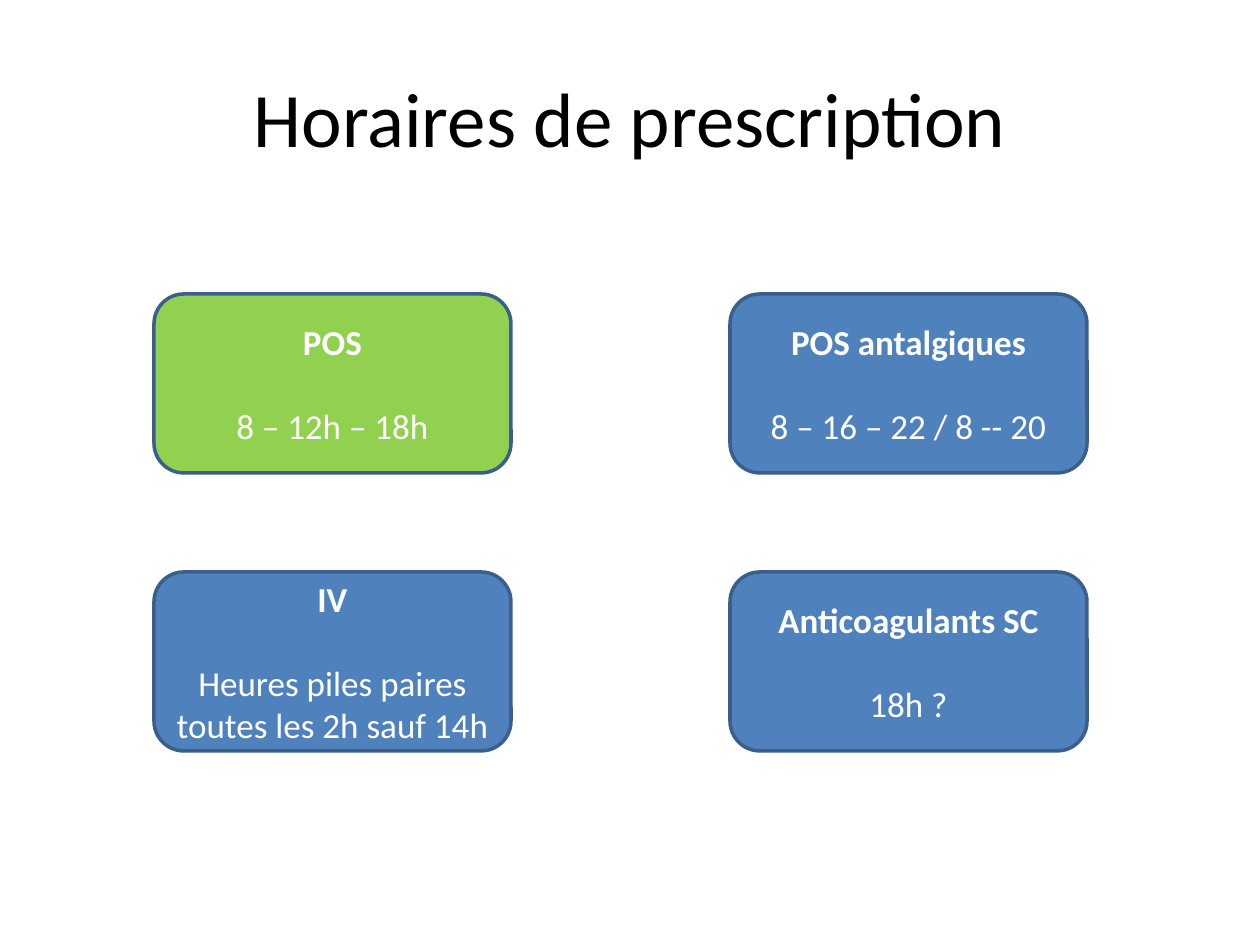
from dataclasses import dataclass

from pptx import Presentation
from pptx.dml.color import RGBColor
from pptx.enum.shapes import MSO_SHAPE
from pptx.enum.text import MSO_ANCHOR, PP_ALIGN
from pptx.util import Emu, Pt

ROUNDED = MSO_SHAPE.ROUNDED_RECTANGLE
MIDDLE = MSO_ANCHOR.MIDDLE
CENTER = PP_ALIGN.CENTER

PX_PER_INCH = 126
FONT = "Calibri"
COLORS = {
    "black": "000000",
    "white": "FFFFFF",
    "green": "92D050",
    "blue": "4F81BD",
    "outline": "3A5F8C",
}

# Card grid, in px
GRID_LEFT, GRID_TOP = 154, 294
COLUMN_STEP, ROW_STEP = 576, 278
CARD_WIDTH, CARD_HEIGHT = 357, 179


@dataclass(frozen=True)
class Card:
    heading: str
    schedule: str
    fill: str = "blue"


CARDS = [
    Card("POS", "8 – 12h – 18h", "green"),
    Card("POS antalgiques", "8 – 16 – 22 / 8 -- 20"),
    Card("IV", "Heures piles paires toutes les 2h sauf 14h"),
    Card("Anticoagulants SC", "18h ?"),
]


def px(length: int) -> Emu:
    return Emu(round(length * 914400 / PX_PER_INCH))


def color(name: str) -> RGBColor:
    return RGBColor.from_string(COLORS[name])


def write(paragraph, text: str, size: int, color_name: str, bold: bool = False) -> None:
    paragraph.text = text
    paragraph.alignment = CENTER
    font = paragraph.font
    font.name, font.size, font.bold = FONT, Pt(size), bold
    font.color.rgb = color(color_name)


def add_title(slide, text: str) -> None:
    box = slide.shapes.add_textbox(px(63), px(38), px(1134), px(157))
    frame = box.text_frame
    frame.word_wrap = True
    frame.vertical_anchor = MIDDLE
    write(frame.paragraphs[0], text, 44, "black")


def add_card(slide, card: Card, left: int, top: int) -> None:
    shape = slide.shapes.add_shape(
        ROUNDED, px(left), px(top), px(CARD_WIDTH), px(CARD_HEIGHT)
    )
    shape.shadow.inherit = False
    shape.fill.solid()
    shape.fill.fore_color.rgb = color(card.fill)
    shape.line.color.rgb = color("outline")
    shape.line.width = Pt(2)

    frame = shape.text_frame
    frame.word_wrap = True
    frame.vertical_anchor = MIDDLE
    write(frame.paragraphs[0], card.heading, 20, "white", bold=True)
    schedule = frame.add_paragraph()
    write(schedule, card.schedule, 20, "white")
    schedule.space_before = Pt(24.4)


def main() -> None:
    presentation = Presentation()
    presentation.slide_width = px(1260)
    presentation.slide_height = px(945)
    slide = presentation.slides.add_slide(presentation.slide_layouts[6])

    # Title
    add_title(slide, "Horaires de prescription")

    # Two-by-two grid of schedules
    for index, card in enumerate(CARDS):
        row, column = divmod(index, 2)
        add_card(
            slide, card, GRID_LEFT + column * COLUMN_STEP, GRID_TOP + row * ROW_STEP
        )

    presentation.save("out.pptx")


if __name__ == "__main__":
    main()
